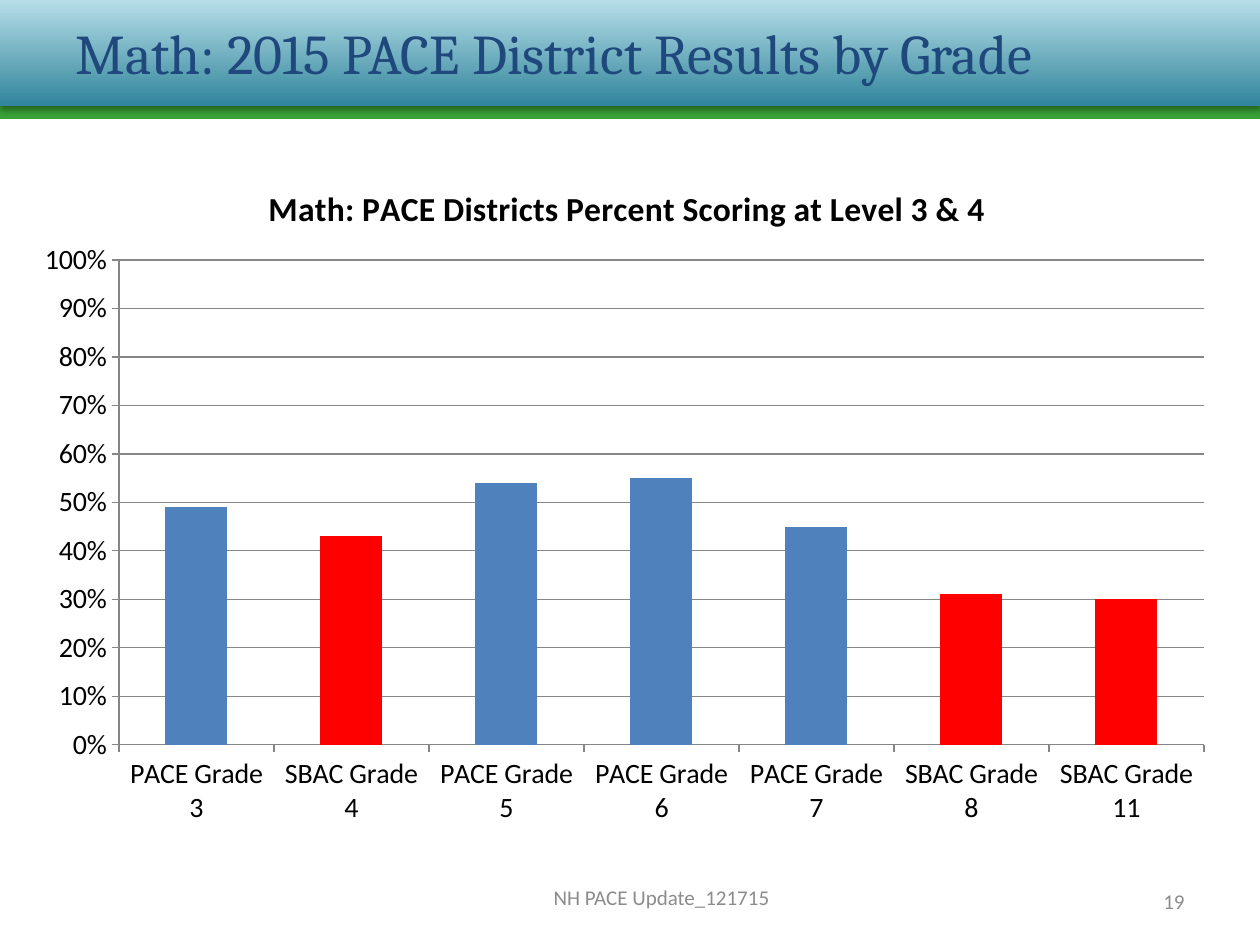
from pptx import Presentation
from pptx.chart.data import CategoryChartData
from pptx.dml.color import RGBColor
from pptx.enum.chart import XL_CHART_TYPE, XL_TICK_MARK
from pptx.enum.shapes import MSO_SHAPE
from pptx.enum.text import MSO_ANCHOR, PP_ALIGN
from pptx.oxml import parse_xml
from pptx.oxml.ns import nsdecls, qn
from pptx.util import Pt

SCALE = 914400 / 126
BLACK = RGBColor(0x00, 0x00, 0x00)
NAVY = RGBColor(0x1F, 0x49, 0x7D)
TEAL = RGBColor(0x31, 0x85, 0x9C)
PALE_TEAL = RGBColor(0xB7, 0xDE, 0xE8)
GREEN = RGBColor(0x39, 0xA0, 0x36)
BLUE = RGBColor(0x4F, 0x81, 0xBD)
RED = RGBColor(0xFF, 0x00, 0x00)
GRAY = RGBColor(0x8C, 0x8C, 0x8C)
AXIS_GRAY = RGBColor(0x86, 0x86, 0x86)

RESULTS = {
    "PACE Grade 3": 0.49,
    "SBAC Grade 4": 0.43,
    "PACE Grade 5": 0.54,
    "PACE Grade 6": 0.55,
    "PACE Grade 7": 0.45,
    "SBAC Grade 8": 0.31,
    "SBAC Grade 11": 0.30,
}


def px(length):
    return round(length * SCALE)


def emu_box(*lengths):
    return [px(length) for length in lengths]


def set_attributes(target, values):
    for name, value in values.items():
        setattr(target, name, value)


def set_font(font, size, color, name="Calibri", bold=False):
    set_attributes(font, {"size": Pt(size), "name": name, "bold": bold})
    font.color.rgb = color


def format_text(shape, text, size, color, name, alignment):
    frame = shape.text_frame
    frame.text = text
    set_attributes(frame, {"word_wrap": True, "vertical_anchor": MSO_ANCHOR.MIDDLE})
    paragraph = frame.paragraphs[0]
    paragraph.alignment = alignment
    set_font(paragraph.font, size, color, name)


def add_band(slide, left, top, width, height):
    band = slide.shapes.add_shape(MSO_SHAPE.RECTANGLE, *emu_box(left, top, width, height))
    band.shadow.inherit = False
    band.line.fill.background()
    return band


def add_header(slide, left, top, width, height):
    stripe = add_band(slide, left, top + height - 25, width, 25)
    stripe.fill.solid()
    stripe.fill.fore_color.rgb = GREEN

    banner = add_band(slide, left, top, width, height - 13)
    banner.fill.gradient()
    banner.fill.gradient_angle = 90
    for stop, color, position in zip(banner.fill.gradient_stops, (TEAL, PALE_TEAL), (0, 1)):
        stop.color.rgb = color
        stop.position = position
    effects = banner.element.spPr.find(qn("a:effectLst"))
    effects.append(parse_xml(
        f'<a:outerShdw {nsdecls("a")} blurRad="{Pt(3.1)}" dist="{Pt(1.8)}" dir="5400000" '
        'rotWithShape="0"><a:srgbClr val="000000"><a:alpha val="35000"/></a:srgbClr>'
        '</a:outerShdw>'))

    title = slide.shapes.title
    banner.element.addnext(title.element)
    bounds = emu_box(left + 63, top + 18, width - 136, 68)
    set_attributes(title, dict(zip(("left", "top", "width", "height"), bounds)))
    format_text(title, "Math: 2015 PACE District Results by Grade", 32, NAVY,
                "Cambria", PP_ALIGN.LEFT)


def set_layout(parent, index, target="", **fractions):
    for layout in parent.findall(qn("c:layout")):
        parent.remove(layout)
    modes = "".join(f'<c:{axis}Mode val="edge"/>' for axis in "xy")
    values = "".join(f'<c:{name} val="{value}"/>' for name, value in fractions.items())
    parent.insert(index, parse_xml(
        f'<c:layout {nsdecls("c")}><c:manualLayout>{target}{modes}{values}'
        '</c:manualLayout></c:layout>'))


def add_results_chart(slide, left, top, width, height):
    data = CategoryChartData(number_format="0%")
    data.categories = list(RESULTS)
    data.add_series("Series 1", list(RESULTS.values()))
    chart = slide.shapes.add_chart(
        XL_CHART_TYPE.COLUMN_CLUSTERED, *emu_box(left, top, width, height), data).chart
    set_attributes(chart, {"has_legend": False, "has_title": True})
    set_font(chart.font, 16, BLACK)

    heading = chart.chart_title.text_frame
    heading.text = "Math: PACE Districts Percent Scoring at Level 3 & 4"
    set_font(heading.paragraphs[0].runs[0].font, 19.2, BLACK, bold=True)
    set_layout(chart.chart_title.element, 1, x=0.2, y=0.045)

    plot_area = chart.element.find(f'{qn("c:chart")}/{qn("c:plotArea")}')
    set_layout(plot_area, 0, '<c:layoutTarget val="inner"/>',
               x=98 / width, y=113 / height, w=1085 / width, h=485 / height)

    set_attributes(chart.value_axis, {
        "minimum_scale": 0, "maximum_scale": 1, "major_unit": 0.1,
        "has_major_gridlines": True})
    set_attributes(chart.value_axis.tick_labels,
                   {"number_format": "0%", "number_format_is_linked": False})
    for axis in (chart.category_axis, chart.value_axis):
        axis.major_tick_mark = XL_TICK_MARK.OUTSIDE
    for line_owner in (chart.category_axis, chart.value_axis, chart.value_axis.major_gridlines):
        line_owner.format.line.color.rgb = AXIS_GRAY
        line_owner.format.line.width = Pt(0.75)

    plot = chart.plots[0]
    set_attributes(plot, {"gap_width": 150, "vary_by_categories": False})
    series = plot.series[0]
    series.format.fill.solid()
    series.format.fill.fore_color.rgb = BLUE
    for index, category in enumerate(RESULTS):
        if category.startswith("SBAC"):
            fill = series.points[index].format.fill
            fill.solid()
            fill.fore_color.rgb = RED


def add_footer(slide, left, top, width, height):
    for text, box, alignment in (
        ("19", (left + width - 147, top + 4, 147, height), PP_ALIGN.RIGHT),
        ("NH PACE Update_121715", (left, top, 735, height), PP_ALIGN.CENTER),
    ):
        shape = slide.shapes.add_textbox(*emu_box(*box))
        format_text(shape, text, 12, GRAY, "Calibri", alignment)


def main():
    presentation = Presentation()
    set_attributes(presentation, {"slide_width": px(1260), "slide_height": px(945)})
    slide = presentation.slides.add_slide(presentation.slide_layouts[5])
    add_header(slide, 0, 0, 1260, 119)
    add_footer(slide, 294, 872, 903, 50)
    add_results_chart(slide, 21, 147, 1207, 693)
    presentation.save("out.pptx")


if __name__ == "__main__":
    main()
